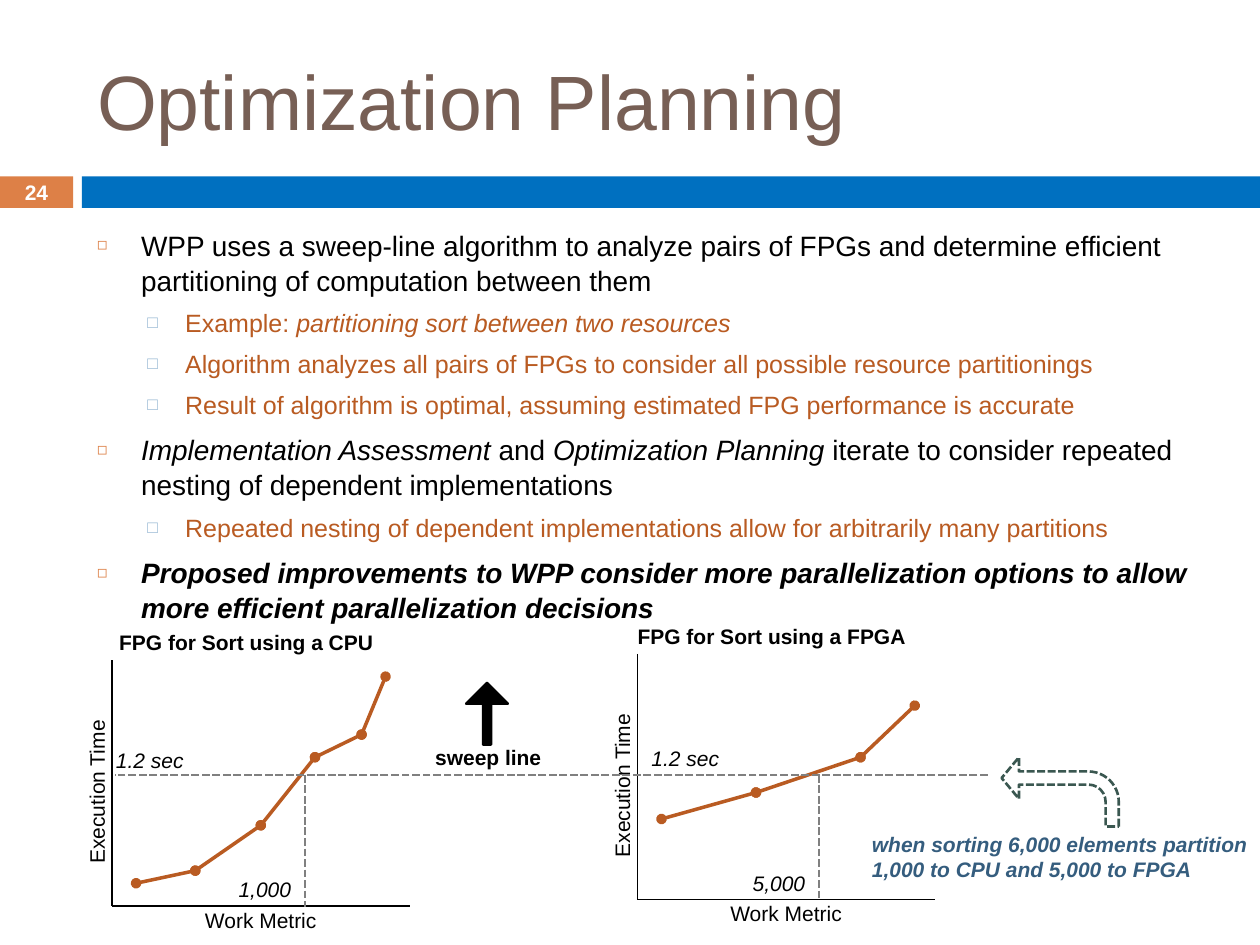
from itertools import pairwise

from lxml.etree import SubElement
from pptx import Presentation
from pptx.dml.color import RGBColor
from pptx.enum.dml import MSO_LINE_DASH_STYLE as Dash
from pptx.enum.shapes import MSO_CONNECTOR as Connector, MSO_SHAPE as Shape
from pptx.enum.text import MSO_ANCHOR as Anchor, MSO_AUTO_SIZE as Fit, PP_ALIGN as Align
from pptx.oxml.ns import qn
from pptx.util import Inches, Pt

FONT = "Arial"
BLACK, WHITE, GRAY, RUST = "000000", "FFFFFF", "808080", "B95B22"
ORANGE, BLUE, BROWN, NAVY, GREEN = "DD8047", "0070C0", "775F55", "355D7E", "3A5750"

TITLE = "Optimization Planning"
BULLETS = [
    (0, [("WPP uses a sweep-line algorithm to analyze pairs of FPGs and determine "
          "efficient partitioning of computation between them", "")]),
    (1, [("Example: ", ""), ("partitioning sort between two resources", "i")]),
    (1, [("Algorithm analyzes all pairs of FPGs to consider all possible resource partitionings", "")]),
    (1, [("Result of algorithm is optimal, assuming estimated FPG performance is accurate", "")]),
    (0, [("Implementation Assessment", "i"), (" and ", ""), ("Optimization Planning", "i"),
         (" iterate to consider repeated nesting of dependent implementations", "")]),
    (1, [("Repeated nesting of dependent implementations allow for arbitrarily many partitions", "")]),
    (0, [("Proposed improvements to WPP consider more parallelization options to allow "
          "more efficient parallelization decisions", "bi")]),
]
LEVELS = [
    dict(size=16, color=BLACK, margin=0.35, hang=0.35, before=7, mark="◻", tint=ORANGE, scale=60),
    dict(size=14.3, color=RUST, margin=0.7, hang=0.3, before=5.5, mark="□", tint="94B6D2", scale=70),
]
GRAPHS = [
    dict(title="FPG for Sort using a CPU", origin=(0.89, 7.19),
         points=[(1.08, 7.01), (1.55, 6.91), (2.07, 6.55), (2.5, 6.01), (2.87, 5.83), (3.06, 5.37)],
         split=2.42, work="1,000", time_at=(0.92, 5.93)),
    dict(title="FPG for Sort using a FPGA", origin=(5.06, 7.14),
         points=[(5.25, 6.5), (6, 6.29), (6.83, 6.01), (7.26, 5.6)],
         split=6.5, work="5,000", time_at=(5.17, 5.92)),
]
AXIS_WIDTH, AXIS_HEIGHT, SWEEP_Y = 2.36, 1.95, 6.15


def rgb(value):
    return RGBColor.from_string(value)


def place(item, left, top, width, height):
    item.left, item.top, item.width, item.height = map(Inches, (left, top, width, height))


def add_span(para, text, size, color, style=""):
    span = para.add_run()
    span.text = text
    font = span.font
    font.name, font.size, font.color.rgb = FONT, Pt(size), rgb(color)
    font.bold, font.italic = "b" in style, "i" in style


def add_label(page, text, at, style="", align=Align.LEFT, color=BLACK, turn=0):
    box = page.shapes.add_textbox(*map(Inches, at))
    box.rotation = turn
    frame = box.text_frame
    frame.word_wrap = True
    frame.margin_left = frame.margin_right = frame.margin_top = frame.margin_bottom = 0
    para = frame.paragraphs[0]
    para.alignment = align
    add_span(para, text, 12, color, style)
    return box


def add_line(page, start, end, color, width, dashed=False, dots=False):
    line = page.shapes.add_connector(Connector.STRAIGHT, *map(Inches, (*start, *end)))
    line.line.color.rgb, line.line.width = rgb(color), Pt(width)
    if dashed:
        line.line.dash_style = Dash.SQUARE_DOT
    if dots:
        for end_name in ("a:headEnd", "a:tailEnd"):
            SubElement(line.line._get_or_add_ln(), qn(end_name), type="oval")
    SubElement(line._element.spPr, qn("a:effectLst"))


def add_figure(page, kind, at, fill=None, outline=None, adjust=()):
    figure = page.shapes.add_shape(kind, *map(Inches, at))
    figure.shadow.inherit = False
    if fill:
        figure.fill.solid()
        figure.fill.fore_color.rgb = rgb(fill)
    else:
        figure.fill.background()
    if outline:
        figure.line.color.rgb, figure.line.width = rgb(outline), Pt(1.5)
    else:
        figure.line.fill.background()
    for index, value in enumerate(adjust):
        figure.adjustments[index] = value
    return figure


def add_bullet(para, level, spans):
    look = LEVELS[level]
    para.level, para.space_before, para.line_spacing = level, Pt(look["before"]), 1.04
    props = para._p.get_or_add_pPr()
    props.set("marL", str(Inches(look["margin"])))
    props.set("indent", str(-Inches(look["hang"])))
    SubElement(SubElement(props, qn("a:buClr")), qn("a:srgbClr"), val=look["tint"])
    SubElement(props, qn("a:buSzPct"), val=str(look["scale"] * 1000))
    SubElement(props, qn("a:buFont"), typeface=FONT)
    SubElement(props, qn("a:buChar"), char=look["mark"])
    for text, style in spans:
        add_span(para, text, look["size"], look["color"], style)


def fill_placeholders(page):
    title, body = page.shapes.title, page.placeholders[1]
    place(title, 0.67, 0.25, 8.92, 1.08)
    place(body, 0.67, 1.75, 8.92, 3.25)
    for box in (title, body):
        box.text_frame.word_wrap, box.text_frame.auto_size = True, Fit.NONE
    title.text_frame.vertical_anchor = Anchor.MIDDLE
    heading = title.text_frame.paragraphs[0]
    heading.alignment = Align.LEFT
    add_span(heading, TITLE, 44, BROWN)
    frame = body.text_frame
    frame.vertical_anchor = Anchor.TOP
    for index, (level, spans) in enumerate(BULLETS):
        add_bullet(frame.add_paragraph() if index else frame.paragraphs[0], level, spans)


def add_graph(page, graph):
    x, y = graph["origin"]
    top = y - AXIS_HEIGHT
    add_line(page, (x, top), (x, y), BLACK, 1)
    add_line(page, (x, y), (x + AXIS_WIDTH, y), BLACK, 1)
    add_label(page, "Work Metric", (x, y + 0.01, AXIS_WIDTH, 0.2), align=Align.CENTER)
    add_label(page, "Execution Time", (x - 1.02, y - 1.02, 1.82, 0.23), align=Align.CENTER, turn=270)
    add_label(page, graph["title"], (x - 0.07, top - 0.24, 2.27, 0.2), "b", Align.CENTER)
    for start, end in pairwise(graph["points"]):
        add_line(page, start, end, RUST, 2, dots=True)
    split = graph["split"]
    add_line(page, (split, SWEEP_Y), (split, y + 0.01), GRAY, 1.5, dashed=True)
    add_label(page, graph["work"], (split - 0.82, y - 0.23, 0.71, 0.2), "i", Align.RIGHT)
    add_label(page, "1.2 sec", (*graph["time_at"], 0.79, 0.2), "i")


def main():
    """Build the optimization planning slide."""
    deck = Presentation()
    deck.slide_width, deck.slide_height = Inches(10), Inches(7.5)
    page = deck.slides.add_slide(deck.slide_layouts[1])
    fill_placeholders(page)
    add_figure(page, Shape.RECTANGLE, (0, 1.4, 0.58, 0.25), ORANGE)
    add_figure(page, Shape.RECTANGLE, (0.65, 1.4, 9.35, 0.25), BLUE)
    number = add_label(page, "24", (0, 1.39, 0.58, 0.27), "b", Align.CENTER, WHITE)
    number.text_frame.vertical_anchor = Anchor.MIDDLE
    for graph in GRAPHS:
        add_graph(page, graph)
    add_line(page, (7.84, SWEEP_Y), (0.91, SWEEP_Y), GRAY, 1.5, dashed=True)
    add_label(page, "sweep line", (3.25, 5.91, 1.25, 0.2), "b", Align.CENTER)
    add_label(page, "when sorting 6,000 elements partition 1,000 to CPU and 5,000 to FPGA",
              (6.92, 6.6, 2.99, 0.4), "bi", color=NAVY)
    bent = add_figure(page, Shape.BENT_ARROW, (7.95, 6.01, 0.93, 0.55), outline=GREEN,
                      adjust=(0.19, 0.3, 0.25, 0.44))
    bent.line.dash_style = Dash.SQUARE_DOT
    bent._element.spPr.xfrm.set("flipH", "1")
    sweep = add_figure(page, Shape.DOWN_ARROW, (3.7, 5.42, 0.33, 0.49), BLACK, BLACK, (0.19, 0.5))
    sweep.rotation = 180
    deck.save("out.pptx")


if __name__ == "__main__":
    main()
